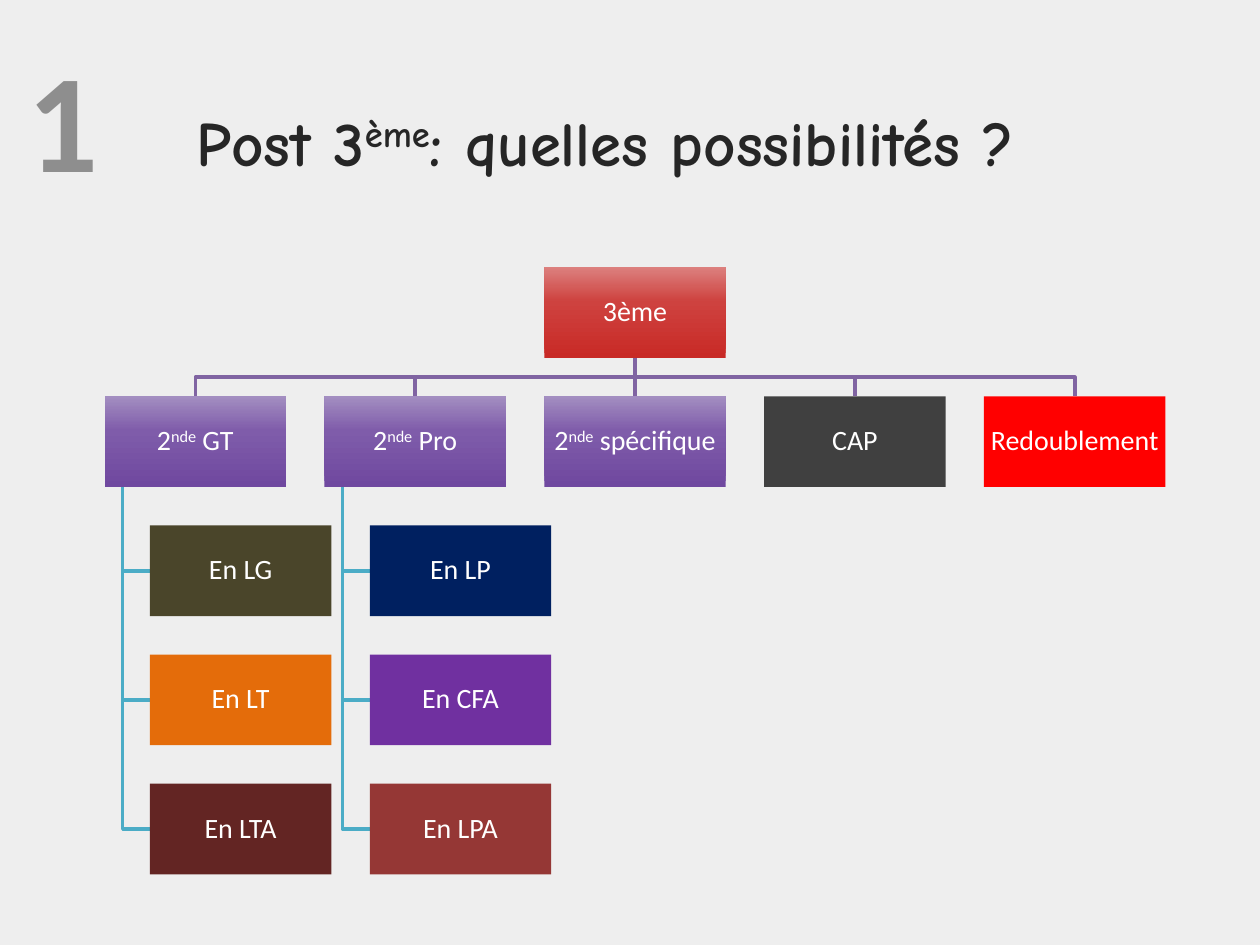
"""Build a slide with the tree of school options that follow the 3ème."""
import copy
import pptx
import pptx.dml.color
import pptx.enum.shapes
import pptx.enum.text
import pptx.oxml.ns
import pptx.util
from dataclasses import dataclass
from lxml import etree
from pptx.util import Inches

TITLE = "Post 3^ème^: quelles possibilités ?"
NUMBER = "1"
ROOT = "3ème"
BRANCHES = [
    ("2^nde^ GT", "purple", [("En LG", "4A452A"), ("En LT", "E46C0A"), ("En LTA", "632523")]),
    ("2^nde^ Pro", "purple", [("En LP", "002060"), ("En CFA", "7030A0"), ("En LPA", "953735")]),
    ("2^nde^ spécifique", "purple", []),
    ("CAP", "404040", []),
    ("Redoublement", "FF0000", []),
]
GRADIENTS = {
    "red": [(0, "C82A26"), (0.62, "CE423F"), (1, "DC807E")],
    "purple": [(0, "6F489F"), (0.62, "7F5CAA"), (1, "A38EC1")],
}


@dataclass(frozen=True)
class Theme:
    background: str = "EEEEEE"
    title: str = "262626"
    number: str = "000000"
    label: str = "FFFFFF"
    branch_line: str = "8064A2"
    leaf_line: str = "4BACC6"
    title_font: str = "Comic Neue"
    body_font: str = "Calibri"
    title_size: int = 36
    number_size: int = 80
    label_size: int = 16
    line_width: int = 2


THEME = Theme()
BOX_W, BOX_H = 1.44, 0.72
LEFT, LAST_LEFT = 0.83, 7.81
TOP, LAST_TOP = 2.12, 6.22
COLUMN_STEP = (LAST_LEFT - LEFT) / (len(BRANCHES) - 1)
ROW_STEP = (LAST_TOP - TOP) / 4
STEM_OFFSET, LEAF_INDENT = BOX_W / 10, BOX_W / 4


def rgb(value):
    return pptx.dml.color.RGBColor.from_string(value)


def write(frame, text, font, size, color, bold=False):
    """Write text whose parts between carets are superscript."""
    paragraph = frame.paragraphs[0]
    paragraph.font.name = font
    paragraph.font.size = pptx.util.Pt(size)
    paragraph.font.bold = bold
    paragraph.font.color.rgb = rgb(color)
    for index, part in enumerate(text.split("^")):
        run = paragraph.add_run()
        run.text = part
        if index % 2:
            run._r.get_or_add_rPr().set("baseline", "30000")
    return paragraph


def paint(box, fill):
    """Fill a box with a plain colour or a named gradient."""
    if fill not in GRADIENTS:
        box.fill.solid()
        box.fill.fore_color.rgb = rgb(fill)
        return
    box.fill.gradient()
    box.fill.gradient_angle = 90
    stop_list = next(box._element.iter(pptx.oxml.ns.qn("a:gsLst")))
    stop_list.append(copy.deepcopy(stop_list[0]))
    for stop, (position, color) in zip(box.fill.gradient_stops, GRADIENTS[fill]):
        stop.position = position
        stop.color.rgb = rgb(color)


def add_box(shapes, left, top, text, fill):
    box = shapes.add_shape(pptx.enum.shapes.MSO_SHAPE.RECTANGLE,
                           Inches(left), Inches(top), Inches(BOX_W), Inches(BOX_H))
    box.shadow.inherit = False
    box.line.fill.background()
    paint(box, fill)
    frame = box.text_frame
    frame.word_wrap = True
    frame.vertical_anchor = pptx.enum.text.MSO_ANCHOR.MIDDLE
    frame.margin_left = frame.margin_right = Inches(0.01)
    frame.margin_top = frame.margin_bottom = Inches(0.01)
    label = write(frame, text, THEME.body_font, THEME.label_size, THEME.label)
    label.alignment = pptx.enum.text.PP_ALIGN.CENTER
    label.line_spacing = 0.9
    return box


def style_line(link, color):
    link.line.color.rgb = rgb(color)
    link.line.width = pptx.util.Pt(THEME.line_width)


def add_elbow(shapes, points, color):
    start, *rest = [(Inches(x), Inches(y)) for x, y in points]
    builder = shapes.build_freeform(*start)
    builder.add_line_segments(rest, close=False)
    elbow = builder.convert_to_shape()
    elbow.shadow.inherit = False
    elbow.fill.background()
    style_line(elbow, color)


def add_straight(shapes, upper, lower, color):
    link = shapes.add_connector(pptx.enum.shapes.MSO_CONNECTOR.STRAIGHT, 0, 0, 0, 0)
    link.begin_connect(upper, 2)
    link.end_connect(lower, 0)
    style_line(link, color)
    etree.SubElement(link._element.spPr, pptx.oxml.ns.qn("a:effectLst"))


def add_heading(slide):
    title = slide.shapes.title
    title.left, title.top = Inches(1.46), Inches(0.21)
    title.width, title.height = Inches(8.19), Inches(1.26)
    frame = title.text_frame
    frame.auto_size = pptx.enum.text.MSO_AUTO_SIZE.NONE
    frame.vertical_anchor = pptx.enum.text.MSO_ANCHOR.BOTTOM
    heading = write(frame, TITLE, THEME.title_font, THEME.title_size, THEME.title, bold=True)
    heading.alignment = pptx.enum.text.PP_ALIGN.LEFT

    number = slide.shapes.add_textbox(Inches(0.12), Inches(0.21), Inches(1.18), Inches(1.45))
    number.text_frame.word_wrap = True
    digit = write(number.text_frame, NUMBER, THEME.body_font, THEME.number_size,
                  THEME.number, bold=True)
    ink = next(digit._p.iter(pptx.oxml.ns.qn("a:srgbClr")))
    etree.SubElement(ink, pptx.oxml.ns.qn("a:alpha"), val="40000")


def add_tree(shapes):
    root_left = LEFT + len(BRANCHES) // 2 * COLUMN_STEP
    root_x, root_bottom = root_left + BOX_W / 2, TOP + BOX_H
    branch_top = TOP + ROW_STEP
    branch_bottom = branch_top + BOX_H
    bar_y = (root_bottom + branch_top) / 2
    root = add_box(shapes, root_left, TOP, ROOT, "red")
    for column, (name, fill, leaves) in enumerate(BRANCHES):
        left = LEFT + column * COLUMN_STEP
        center, stem = left + BOX_W / 2, left + STEM_OFFSET
        branch = add_box(shapes, left, branch_top, name, fill)
        if column == len(BRANCHES) // 2:
            add_straight(shapes, root, branch, THEME.branch_line)
        else:
            add_elbow(shapes, [(root_x, root_bottom), (root_x, bar_y),
                               (center, bar_y), (center, branch_top)], THEME.branch_line)
        for row, (leaf, leaf_fill) in enumerate(leaves, start=1):
            leaf_left, leaf_top = left + LEAF_INDENT, branch_top + row * ROW_STEP
            middle = leaf_top + BOX_H / 2
            add_elbow(shapes, [(stem, branch_bottom), (stem, middle), (leaf_left, middle)],
                      THEME.leaf_line)
            add_box(shapes, leaf_left, leaf_top, leaf, leaf_fill)


def main():
    deck = pptx.Presentation()
    deck.slide_width, deck.slide_height = Inches(10), Inches(7.5)
    slide = deck.slides.add_slide(deck.slide_layouts[5])
    slide.background.fill.solid()
    slide.background.fill.fore_color.rgb = rgb(THEME.background)
    add_heading(slide)
    add_tree(slide.shapes)
    deck.save("out.pptx")


if __name__ == "__main__":
    main()
